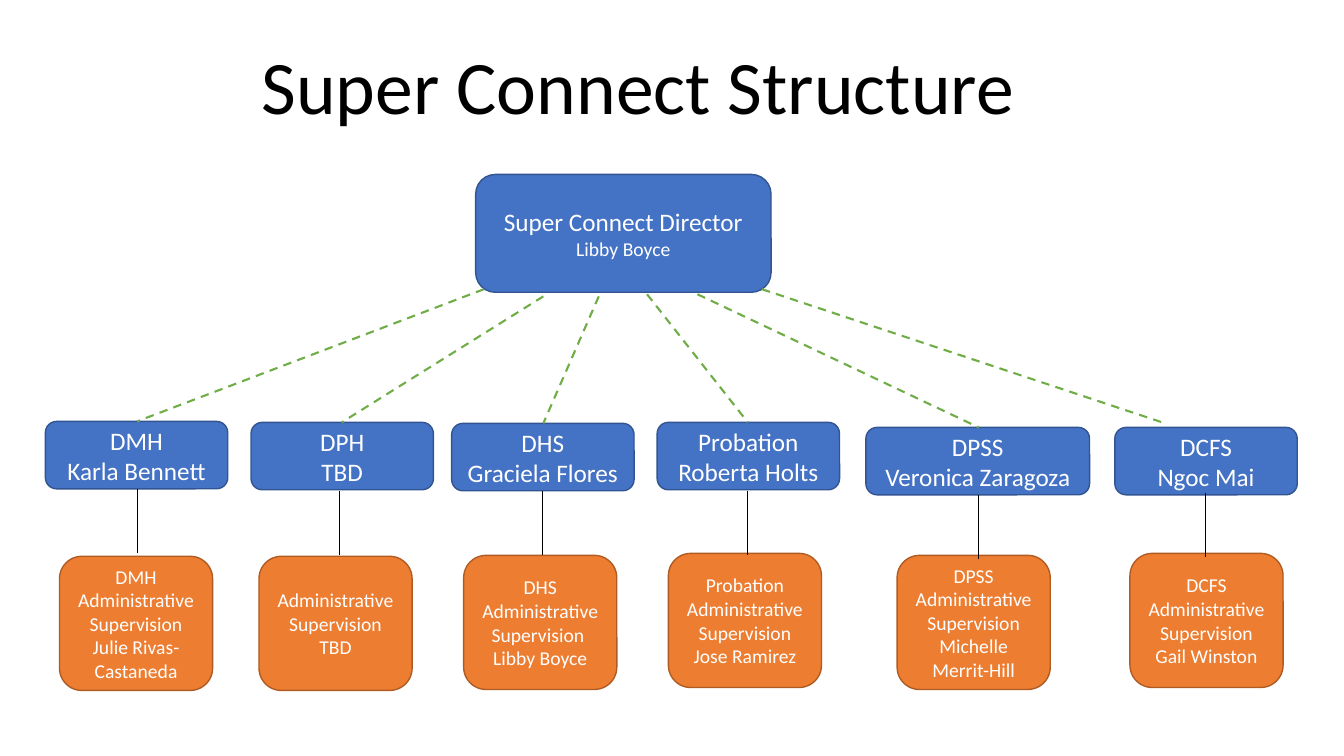
from dataclasses import dataclass

from lxml import etree
from pptx import Presentation
from pptx.dml.color import RGBColor
from pptx.enum import dml, shapes, text
from pptx.oxml import ns
from pptx.util import Pt

FONT = "Calibri"
BLUE, BLUE_EDGE = "4472C4", "325491"
ORANGE, ORANGE_EDGE = "ED7D31", "AF5C24"
GREEN, BLACK, WHITE = "70AD47", "000000", "FFFFFF"
HEAD_H, STEM_H = 48.2, 46.1
SUP_W, SUP_H = 109.4, 95.8

Point = tuple[float, float]


@dataclass
class Department:
    head: str
    supervision: str
    head_at: Point
    supervision_at: Point
    dash_from: Point
    dash_to: Point
    stem_at: Point
    width: float = 130.3


DEPARTMENTS = [
    Department("DMH\nKarla Bennett",
               "DMH\nAdministrative Supervision\nJulie Rivas-Castaneda",
               (32.4, 301), (42.5, 397.4), (345.6, 206.6), (97.9, 301), (97.9, 349.2)),
    Department("DPH\nTBD", "Administrative Supervision\nTBD",
               (179.3, 301.7), (185, 397.4), (388.1, 211.7), (244.1, 301.7), (242.6, 350.6)),
    Department("DHS\nGraciela Flores",
               "DHS\nAdministrative Supervision \nLibby Boyce",
               (322.6, 302.4), (331.2, 396.7), (427.7, 211.7), (388.1, 302.4), (387.4, 350.6)),
    Department("Probation\nRoberta Holts",
               "Probation\nAdministrative Supervision Jose Ramirez",
               (469.4, 301.7), (477.4, 395.3), (462.2, 210.2), (534.2, 301.7), (533.5, 350.6)),
    Department("DPSS\nVeronica Zaragoza",
               "DPSS\nAdministrative Supervision Michelle Merrit-Hill",
               (618.5, 305.3), (640.8, 396.7), (498.2, 210.2), (699.1, 305.3), (699.1, 353.5),
               width=159.8),
    Department("DCFS\nNgoc Mai",
               "DCFS\nAdministrative Supervision Gail Winston",
               (796.3, 305.3), (807.1, 395.3), (544.3, 206.6), (830.2, 301.7), (861.1, 352.1)),
]


def rgb(value: str) -> RGBColor:
    return RGBColor.from_string(value)


def format_text(tf, size: float, color: str) -> None:
    for p in tf.paragraphs:
        p.alignment = text.PP_ALIGN.CENTER
        for r in p.runs:
            r.font.name = FONT
            r.font.size = Pt(size)
            r.font.color.rgb = rgb(color)


def add_box(s, at: Point, width: float, height: float, words: str,
            size: float, fill: str, edge: str):
    sp = s.shapes.add_shape(shapes.MSO_SHAPE.ROUNDED_RECTANGLE,
                            Pt(at[0]), Pt(at[1]), Pt(width), Pt(height))
    sp.shadow.inherit = False
    sp.fill.solid()
    sp.fill.fore_color.rgb = rgb(fill)
    sp.line.color.rgb = rgb(edge)
    sp.line.width = Pt(1)
    tf = sp.text_frame
    tf.word_wrap = True
    tf.vertical_anchor = text.MSO_ANCHOR.MIDDLE
    tf.text = words
    format_text(tf, size, WHITE)
    return sp


def add_line(s, start: Point, end: Point, color: str, width: float,
             dashed: bool = False) -> None:
    line = s.shapes.add_connector(shapes.MSO_CONNECTOR.STRAIGHT,
                                  Pt(start[0]), Pt(start[1]), Pt(end[0]), Pt(end[1]))
    line.line.color.rgb = rgb(color)
    line.line.width = Pt(width)
    if dashed:
        line.line.dash_style = dml.MSO_LINE.DASH
    etree.SubElement(line._element.spPr, ns.qn("a:effectLst"))


def add_title(s) -> None:
    title = s.shapes.title
    title.left, title.top = Pt(100.8), Pt(35.3)
    title.width, title.height = Pt(709.9), Pt(61.9)
    tf = title.text_frame
    tf.text = "Super Connect Structure"
    tf.word_wrap = True
    tf.auto_size = text.MSO_AUTO_SIZE.NONE
    tf.vertical_anchor = text.MSO_ANCHOR.BOTTOM
    tf.paragraphs[0].line_spacing = 0.9
    format_text(tf, 54, BLACK)


def main() -> None:
    prs = Presentation()
    prs.slide_width, prs.slide_height = Pt(960), Pt(540)
    s = prs.slides.add_slide(prs.slide_layouts[0])
    subtitle = s.placeholders[1]._element
    subtitle.getparent().remove(subtitle)
    add_title(s)

    # Director
    director = add_box(s, (339.8, 124.6), 211, 84.2,
                       "Super Connect Director\nLibby Boyce", 18, BLUE, BLUE_EDGE)
    director.text_frame.paragraphs[1].runs[0].font.size = Pt(14)

    # Department heads, then the dashed links above them
    for d in DEPARTMENTS:
        add_box(s, d.head_at, d.width, HEAD_H, d.head, 18, BLUE, BLUE_EDGE)
    for d in DEPARTMENTS:
        add_line(s, d.dash_from, d.dash_to, GREEN, 1.5, dashed=True)

    # Administrative supervision and its stems
    for d in DEPARTMENTS:
        add_box(s, d.supervision_at, SUP_W, SUP_H, d.supervision, 14, ORANGE, ORANGE_EDGE)
        x, y = d.stem_at
        add_line(s, (x, y), (x, y + STEM_H), BLACK, 0.5)

    prs.save("out.pptx")


if __name__ == "__main__":
    main()
